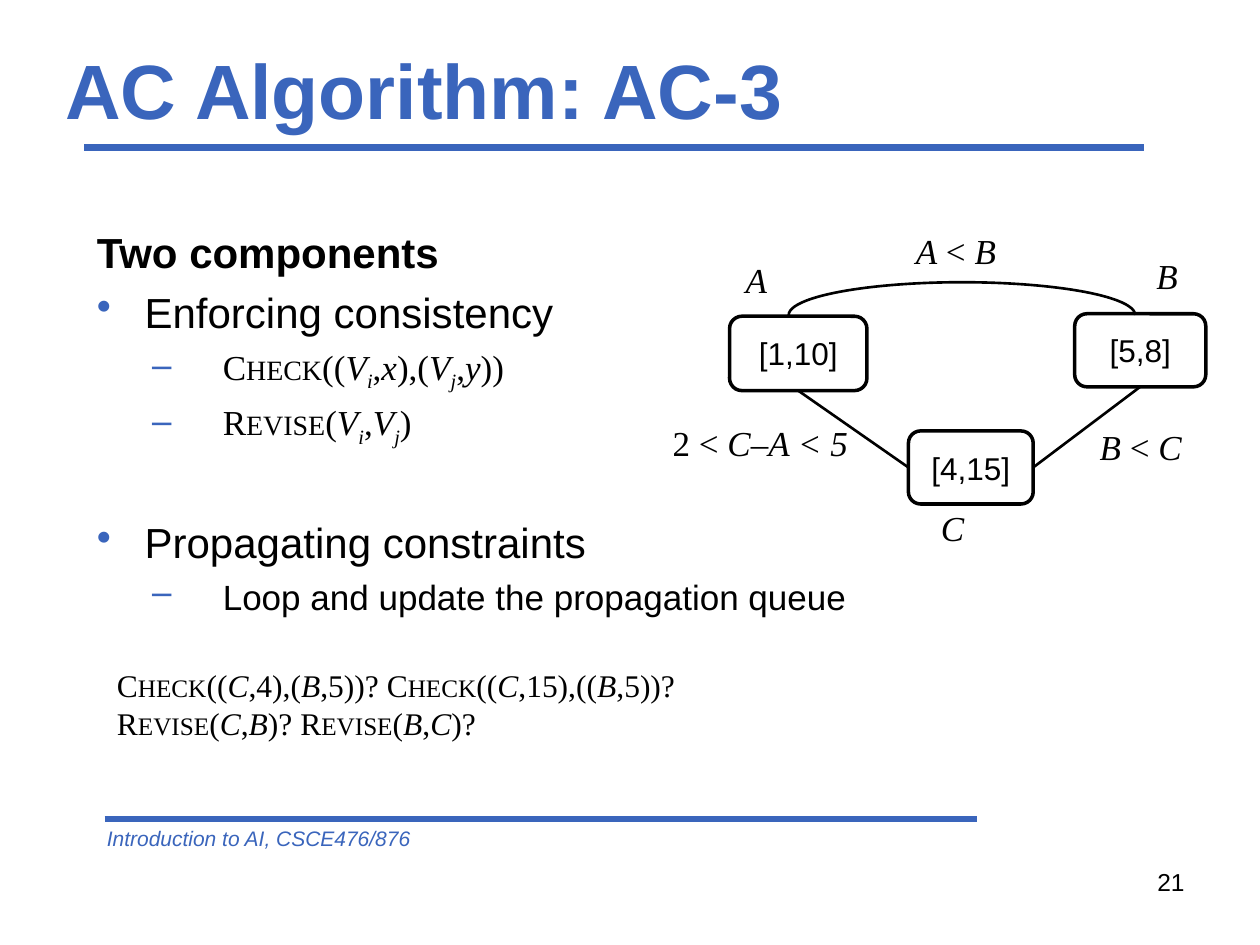
from lxml import etree
from pptx import Presentation
from pptx.dml.color import RGBColor
from pptx.enum.shapes import MSO_CONNECTOR, MSO_SHAPE
from pptx.enum.text import MSO_ANCHOR, PP_ALIGN
from pptx.oxml.ns import qn
from pptx.util import Inches, Pt

LINE = MSO_CONNECTOR.STRAIGHT
ROUND, ARC = MSO_SHAPE.ROUNDED_RECTANGLE, MSO_SHAPE.ARC
TOP, MIDDLE = MSO_ANCHOR.TOP, MSO_ANCHOR.MIDDLE
LEFT, CENTER, RIGHT = PP_ALIGN.LEFT, PP_ALIGN.CENTER, PP_ALIGN.RIGHT
BOTTOM_SIDE, LEFT_SIDE, RIGHT_SIDE = 2, 1, 3

COLORS = {"blue": "3A65BC", "black": "000000"}
SANS, SERIF = "Arial", "Times New Roman"
MARKS = {"*": "italic", "_": "sub", "~": "small"}


class Deck:
    def __init__(self, slide):
        self.slide = slide
        self.shapes = slide.shapes

    def color(self, name):
        return RGBColor.from_string(COLORS[name])

    def fill(self, para, text, size, face=SANS, color="black", **style):
        state, part = set(), ""
        for char in text + "\n":
            if char not in MARKS and char != "\n":
                part += char
                continue
            if part:
                run = para.add_run()
                run.text = part
                form = {"size": Pt(size), "name": face,
                        "italic": "italic" in state, **style}
                for key, value in form.items():
                    setattr(run.font, key, value)
                run.font.color.rgb = self.color(color)
                props = run._r.get_or_add_rPr()
                if "small" in state:
                    props.set("cap", "small")
                if "sub" in state:
                    props.set("baseline", "-25000")
                part = ""
            if char in MARKS:
                state ^= {MARKS[char]}

    def frame(self, place, wrap=True, anchor=TOP):
        frame = self.shapes.add_textbox(*map(Inches, place)).text_frame
        frame.word_wrap = wrap
        frame.vertical_anchor = anchor
        return frame

    def text(self, place, lines, size, wrap=True, anchor=TOP, align=LEFT, **style):
        frame = self.frame(place, wrap, anchor)
        for index, line in enumerate(lines):
            para = frame.add_paragraph() if index else frame.paragraphs[0]
            para.alignment = align
            self.fill(para, line, size, **style)

    def bullet(self, para, mark, margin, indent):
        props = para._p.get_or_add_pPr()
        props.set("marL", str(Inches(margin)))
        props.set("indent", str(Inches(indent)))
        tint = etree.SubElement(props, qn("a:buClr"))
        etree.SubElement(tint, qn("a:srgbClr"), val=COLORS["blue"])
        etree.SubElement(props, qn("a:buChar"), char=mark)

    def list(self, place, items):
        frame = self.frame(place)
        for index, (level, text, face, gap) in enumerate(items):
            para = frame.add_paragraph() if index else frame.paragraphs[0]
            if level == 1:
                self.bullet(para, "•", 0.38, -0.38)
            elif level == 2:
                para.level = 1
                self.bullet(para, "–", 1, -0.56)
            para.space_before = Pt(gap)
            self.fill(para, text, 20 if level == 2 else 24, face, bold=level == 0)

    def shape(self, kind, place, width):
        shape = self.shapes.add_shape(kind, *map(Inches, place))
        shape.shadow.inherit = False
        shape.fill.background()
        shape.line.color.rgb = self.color("black")
        shape.line.width = Pt(width)
        return shape

    def node(self, place, text):
        node = self.shape(ROUND, place, 2)
        node.text_frame.vertical_anchor = MIDDLE
        para = node.text_frame.paragraphs[0]
        para.alignment = CENTER
        self.fill(para, text, 18)
        return node

    def line(self, start, end, color, width):
        line = self.shapes.add_connector(LINE, *map(Inches, start + end))
        line.line.color.rgb = self.color(color)
        line.line.width = Pt(width)
        etree.SubElement(line._element.spPr, qn("a:effectLst"))
        return line

    def link(self, first, side, last, end):
        line = self.line((0, 0), (1, 1), "black", 1.5)
        line.begin_connect(first, side)
        line.end_connect(last, end)


def main():
    show = Presentation()
    show.slide_width, show.slide_height = Inches(10), Inches(7.5)
    deck = Deck(show.slides.add_slide(show.slide_layouts[6]))

    deck.line((0.67, 1.17), (9.08, 1.17), "blue", 4)
    deck.line((0.83, 6.5), (7.75, 6.5), "blue", 4)
    deck.text((0.75, 6.5, 5.25, 0.3), ["*Introduction to AI, CSCE476/876*"], 12, color="blue")
    deck.text((0.42, 0.33, 9, 0.75), ["AC Algorithm: AC-3"], 44,
              anchor=MIDDLE, color="blue", bold=True)
    deck.text((7.17, 6.83, 2.33, 0.52), ["21"], 14, align=RIGHT)

    deck.list((0.67, 1.75, 9, 4.33), [
        (0, "Two components", SANS, 0),
        (1, "Enforcing consistency", SANS, 5.5),
        (2, "~Check~((*V_i_*,*x*),(*V_j_*,*y*))", SERIF, 4.6),
        (2, "~Revise~(*V_i_*,*V_j_*)", SERIF, 4.6),
        (1, "Propagating constraints", SANS, 39),
        (2, "Loop and update the propagation queue", SANS, 4.6),
    ])
    deck.text((0.83, 5.24, 4.67, 0.81), [
        "~Check~((*C*,4),(*B*,5))? ~Check~((*C*,15),((*B*,5))?",
        "~Revise~(*C*,*B*)? ~Revise~(*B*,*C*)?",
    ], 18, wrap=False, face=SERIF)

    node_a = deck.node((5.79, 2.51, 1.09, 0.59), "[1,10]")
    node_b = deck.node((8.53, 2.49, 1.04, 0.58), "[5,8]")
    node_c = deck.node((7.21, 3.42, 0.99, 0.58), "[4,15]")
    arc = deck.shape(ARC, (6.26, 2.24, 2.75, 0.52), 1.5)
    arc.adjustments[0] = 107.87
    arc.adjustments[1] = 0

    labels = [
        ((7.17, 1.77, 0.84, 0.44), "*A* < *B*", False),
        ((8.63, 3.33, 0.86, 0.44), "*B* < *C*", False),
        ((5.24, 3.3, 1.6, 0.44), "2 < *C*–*A < 5*", False),
        ((5.82, 2, 0.44, 0.44), "*A*", True),
        ((9.08, 1.97, 0.37, 0.44), "*B*", False),
        ((7.37, 3.97, 0.44, 0.44), "*C*", True),
    ]
    for place, text, wrap in labels:
        deck.text(place, [text], 20, wrap=wrap, face=SERIF)

    deck.link(node_b, BOTTOM_SIDE, node_c, RIGHT_SIDE)
    deck.link(node_a, BOTTOM_SIDE, node_c, LEFT_SIDE)

    show.save("out.pptx")


if __name__ == "__main__":
    main()
